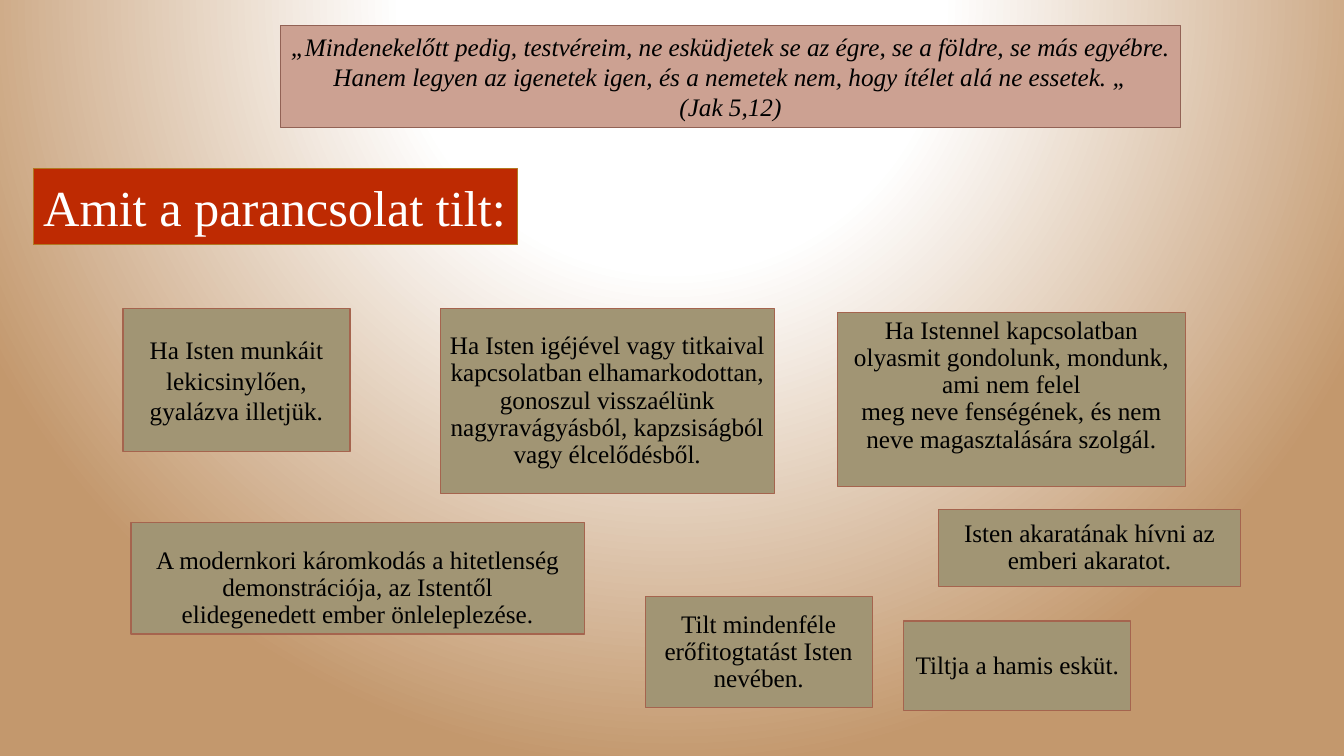
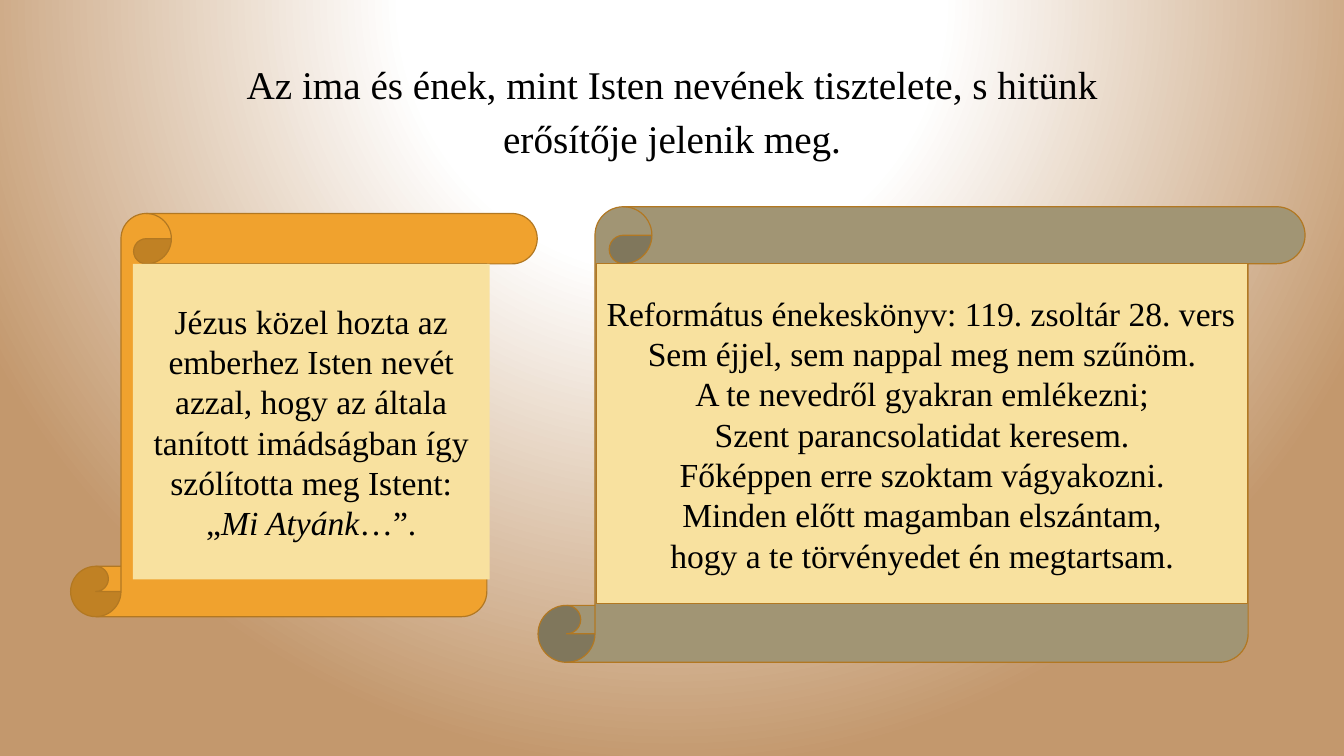
"""Build two Hungarian slides on what the commandment forbids and how prayer honours God's name."""

from dataclasses import dataclass, field

import lxml.etree
import pptx
import pptx.dml.color
import pptx.enum.shapes
import pptx.enum.text
import pptx.oxml.ns
import pptx.presentation
import pptx.slide
import pptx.util

Cm = pptx.util.Cm
Pt = pptx.util.Pt
RGB = pptx.dml.color.RGBColor
MSO_SHAPE = pptx.enum.shapes.MSO_SHAPE
ANCHOR = pptx.enum.text.MSO_ANCHOR
ALIGN = pptx.enum.text.PP_ALIGN

BLACK = RGB.from_string("000000")
WHITE = RGB.from_string("FFFFFF")
OLIVE = RGB.from_string("A19574")
GOLD = RGB.from_string("B27822")
PARCHMENT = RGB.from_string("F8E19F")


@dataclass(frozen=True)
class Style:
    fill: RGB | None = None
    line: RGB | None = None
    line_width: float = 0.85
    color: RGB = BLACK
    size: int = 24
    spacing: float = 1.0
    inset: float = 0.25
    shape: MSO_SHAPE = MSO_SHAPE.RECTANGLE


@dataclass(frozen=True)
class Theme:
    font: str = "Times New Roman"
    backdrop: tuple[tuple[int, str], ...] = ((0, "FFFFFF"), (35, "FFFFFF"), (100, "C3986D"))
    banner: Style = Style(RGB.from_string("BE2A02"), GOLD, color=WHITE, size=36)
    quote: Style = Style(RGB.from_string("CCA192"), RGB.from_string("926255"), 0.75, size=18)
    note: Style = Style(OLIVE, RGB.from_string("A5644E"), size=18, spacing=0.9, inset=0.18)
    loose_note: Style = Style(OLIVE, RGB.from_string("A5644E"), size=18, inset=0.15)
    heading: Style = Style(size=28, spacing=1.15)
    amber_scroll: Style = Style(RGB.from_string("F0A22E"), GOLD, shape=MSO_SHAPE.VERTICAL_SCROLL)
    olive_scroll: Style = Style(OLIVE, GOLD, shape=MSO_SHAPE.VERTICAL_SCROLL)
    page: Style = Style(PARCHMENT)
    framed_page: Style = Style(PARCHMENT, GOLD)


THEME = Theme()


@dataclass(frozen=True)
class Panel:
    style: Style
    left: float
    top: float
    width: float
    height: float
    text: str = ""
    anchor: ANCHOR = ANCHOR.MIDDLE
    lead_align: ALIGN = ALIGN.CENTER
    italic: bool = False
    emphasis: str = field(default="")


PROHIBITIONS = (
    Panel(THEME.banner, 0.84, 4.24, 12.2, 1.93, "Amit a parancsolat tilt:", lead_align=ALIGN.LEFT),
    Panel(THEME.note, 16.26, 15.04, 5.72, 2.79, "Tilt mindenféle erőfitogtatást Isten nevében."),
    Panel(THEME.loose_note, 3.1, 7.77, 5.72, 3.61,
          "Ha Isten munkáit lekicsinylően, gyalázva illetjük."),
    Panel(THEME.note, 11.1, 7.77, 8.41, 4.67,
          "Ha Isten igéjével vagy titkaival kapcsolatban elhamarkodottan, gonoszul visszaélünk "
          "nagyravágyásból, kapzsiságból vagy élcelődésből."),
    Panel(THEME.note, 21.11, 7.87, 8.76, 4.39,
          "Ha Istennel kapcsolatban olyasmit gondolunk, mondunk, ami nem felel\v"
          "meg neve fenségének, és nem neve magasztalására szolgál.", ANCHOR.TOP),
    Panel(THEME.note, 3.3, 13.16, 11.43, 2.82,
          "A modernkori káromkodás a hitetlenség demonstrációja, az Istentől\v"
          "elidegenedett ember önleleplezése.", ANCHOR.BOTTOM),
    Panel(THEME.note, 23.65, 12.83, 7.62, 1.96, "Isten akaratának hívni az emberi akaratot."),
    Panel(THEME.note, 22.78, 15.65, 5.72, 2.26, "Tiltja a hamis esküt."),
    Panel(THEME.quote, 7.06, 0.64, 22.7, 2.57,
          "„Mindenekelőtt pedig, testvéreim, ne esküdjetek se az égre, se a földre, "
          "se más egyébre. Hanem legyen az igenetek igen, és a nemetek nem, "
          "hogy ítélet alá ne essetek. „\v(Jak 5,12)", italic=True),
)

PRAYER_AND_SONG = (
    Panel(THEME.amber_scroll, 1.78, 5.38, 11.76, 10.16),
    Panel(THEME.olive_scroll, 13.56, 5.21, 19.33, 11.48),
    Panel(THEME.heading, 5.66, 1.22, 22.56, 3.0,
          "Az ima és ének, mint Isten nevének tisztelete, s hitünk erősítője jelenik meg.",
          ANCHOR.TOP),
    Panel(THEME.page, 3.35, 6.65, 8.99, 7.95,
          "Jézus közel hozta az emberhez Isten nevét azzal, hogy az általa tanított "
          "imádságban így szólította meg Istent: „Mi Atyánk…”.", emphasis="Mi Atyánk"),
    Panel(THEME.framed_page, 15.04, 6.65, 16.4, 8.56,
          "Református énekeskönyv: 119. zsoltár 28. vers\n"
          "Sem éjjel, sem nappal meg nem szűnöm.\v"
          "A te nevedről gyakran emlékezni;\v"
          "Szent parancsolatidat keresem.\v"
          "Főképpen erre szoktam vágyakozni.\v"
          "Minden előtt magamban elszántam,\v"
          "hogy a te törvényedet én megtartsam.", lead_align=ALIGN.LEFT),
)


def paint_backdrop(master: pptx.slide.SlideMaster) -> None:
    qn = pptx.oxml.ns.qn
    master.background.fill.gradient()
    gradient = next(master.element.iter(qn("a:gradFill")))
    for child in list(gradient):
        gradient.remove(child)
    stops = lxml.etree.SubElement(gradient, qn("a:gsLst"))
    for percent, color in THEME.backdrop:
        stop = lxml.etree.SubElement(stops, qn("a:gs"), pos=str(percent * 1000))
        lxml.etree.SubElement(stop, qn("a:srgbClr"), val=color)
    glow = lxml.etree.SubElement(gradient, qn("a:path"), path="circle")
    lxml.etree.SubElement(glow, qn("a:fillToRect"), l="50000", t="-80000", r="50000", b="180000")


def write_text(frame, panel: Panel) -> None:
    style = panel.style
    frame.word_wrap = True
    frame.vertical_anchor = panel.anchor
    frame.margin_left = frame.margin_right = Cm(style.inset)
    frame.margin_top = frame.margin_bottom = Cm(0.13)
    if panel.emphasis:
        before, emphasis, after = panel.text.partition(panel.emphasis)
        frame.text = before
        for piece in (emphasis, after):
            frame.paragraphs[0].add_run().text = piece
    else:
        frame.text = panel.text
    for index, paragraph in enumerate(frame.paragraphs):
        paragraph.alignment = ALIGN.CENTER if index else panel.lead_align
        paragraph.line_spacing = style.spacing
        for run in paragraph.runs:
            run.font.name = THEME.font
            run.font.size = Pt(style.size)
            run.font.color.rgb = style.color
            run.font.italic = panel.italic or run.text == panel.emphasis


def draw_panel(slide: pptx.slide.Slide, panel: Panel) -> None:
    style = panel.style
    place = [Cm(length) for length in (panel.left, panel.top, panel.width, panel.height)]
    if style.fill is None:
        body = slide.shapes.add_textbox(*place)
    else:
        body = slide.shapes.add_shape(style.shape, *place)
        body.shadow.inherit = False
        body.fill.solid()
        body.fill.fore_color.rgb = style.fill
        if style.line is None:
            body.line.fill.background()
        else:
            body.line.color.rgb = style.line
            body.line.width = Pt(style.line_width)
    if panel.text:
        write_text(body.text_frame, panel)


def add_slide(deck: pptx.presentation.Presentation, panels: tuple[Panel, ...]) -> None:
    slide = deck.slides.add_slide(deck.slide_layouts[6])
    for panel in panels:
        draw_panel(slide, panel)


def main() -> None:
    deck = pptx.Presentation()
    deck.slide_width, deck.slide_height = Cm(33.87), Cm(19.05)
    paint_backdrop(deck.slide_master)
    for panels in (PROHIBITIONS, PRAYER_AND_SONG):
        add_slide(deck, panels)
    deck.save("out.pptx")


if __name__ == "__main__":
    main()
